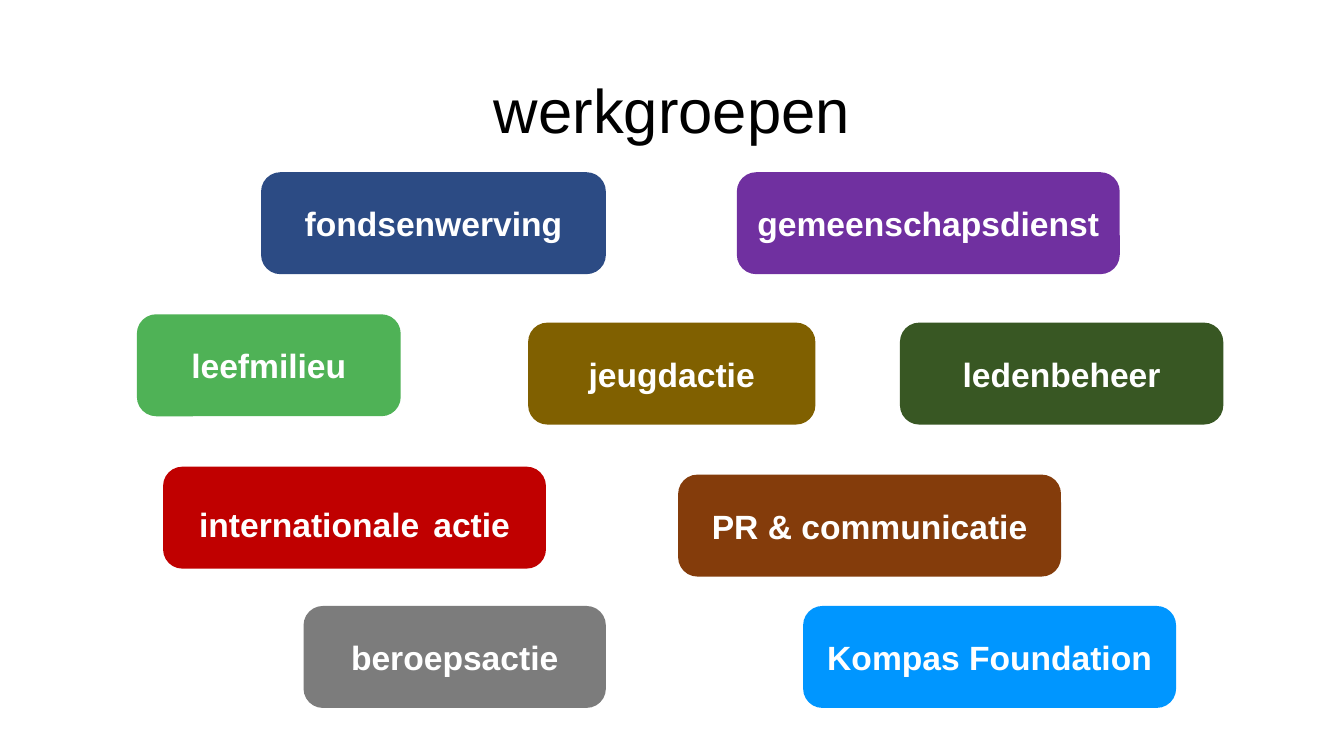
from pptx import Presentation
from pptx.dml.color import RGBColor
from pptx.enum import shapes, text
from pptx.util import Cm, Pt

HUES = {
    "ink": "000000", "white": "FFFFFF", "blue": "2C4B84", "purple": "7030A0",
    "green": "4FB256", "olive": "806000", "forest": "385723", "red": "C00000",
    "brown": "843C0B", "grey": "7C7C7C", "sky": "0096FF",
}
HIGH = 2.57
WORD, GAP = 24, 36
TEAMS = [
    ([("fondsenwerving", WORD)], "blue", 3.13, 0, 8.69),
    ([("gemeenschapsdienst", WORD)], "purple", 15.12, 0, 9.65),
    ([("leefmilieu", WORD)], "green", 0, 3.58, 6.65),
    ([("jeugdactie", WORD)], "olive", 9.86, 3.79, 7.24),
    ([("ledenbeheer", WORD)], "forest", 19.23, 3.79, 8.15),
    ([("internationale", WORD), (" ", GAP), ("actie", WORD)], "red", 0.66, 7.42, 9.65),
    ([("PR & communicatie", WORD)], "brown", 13.64, 7.62, 9.65),
    ([("beroepsactie", WORD)], "grey", 4.2, 10.93, 7.62),
    ([("Kompas Foundation", WORD)], "sky", 16.79, 10.93, 9.4),
]


def paint(hue):
    """Return the colour with this name."""
    return RGBColor.from_string(HUES[hue])


def apply(item, form):
    """Set each attribute of the item from a dict of format values."""
    for key, value in form.items():
        setattr(item, key, value)


def write(frame, runs, hue, bold):
    """Fill a text frame with one centred line of sized runs."""
    apply(frame, {"word_wrap": True, "auto_size": text.MSO_AUTO_SIZE.NONE,
                  "vertical_anchor": text.MSO_ANCHOR.MIDDLE})
    line = frame.paragraphs[0]
    line.alignment = text.PP_ALIGN.CENTER
    for words, size in runs:
        run = line.add_run()
        run.text = words
        apply(run.font, {"name": "Arial", "size": Pt(size), "bold": bold})
        run.font.color.rgb = paint(hue)


def head(slide, left, top, width, height):
    """Place and format the slide title in its box."""
    title = slide.shapes.title
    apply(title, {"left": Cm(left), "top": Cm(top),
                  "width": Cm(width), "height": Cm(height)})
    write(title.text_frame, [("werkgroepen", 44)], "ink", False)
    title.text_frame.paragraphs[0].line_spacing = 0.9


def teams(slide, left, top):
    """Lay out the work group tiles from the given corner."""
    for runs, hue, x, y, width in TEAMS:
        tile = slide.shapes.add_shape(
            shapes.MSO_SHAPE.ROUNDED_RECTANGLE,
            Cm(left + x), Cm(top + y), Cm(width), Cm(HIGH))
        tile.adjustments[0] = 0.19
        tile.shadow.inherit = False
        tile.fill.solid()
        tile.fill.fore_color.rgb = paint(hue)
        tile.line.fill.background()
        write(tile.text_frame, runs, "white", True)


def main():
    """Build the slide and save it."""
    deck = Presentation()
    apply(deck, {"slide_width": Cm(33.87), "slide_height": Cm(19.05)})
    slide = deck.slides.add_slide(deck.slide_layouts.get_by_name("Title Only"))
    head(slide, 2.33, 1.01, 29.21, 3.68)
    teams(slide, 3.45, 4.34)
    deck.save("out.pptx")


if __name__ == "__main__":
    main()
